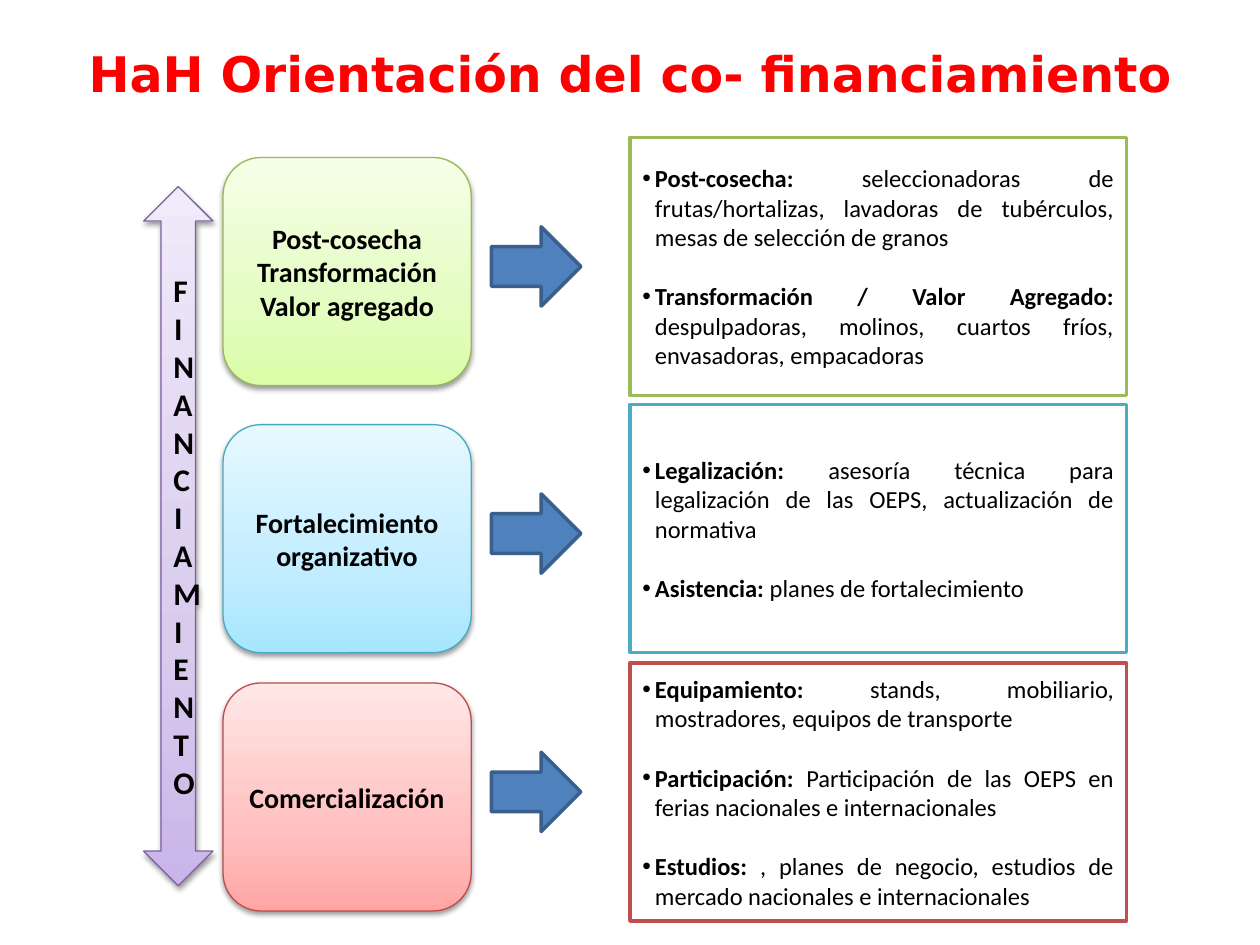
from copy import deepcopy

from lxml.etree import SubElement
from pptx import Presentation
from pptx.dml.color import RGBColor
from pptx.enum.shapes import MSO_SHAPE
from pptx.enum.text import MSO_ANCHOR, MSO_AUTO_SIZE, PP_ALIGN
from pptx.oxml.ns import qn
from pptx.util import Inches, Pt

# Content
TITLE = "HaH Orientación del co- financiamiento"
SPINE = "FINANCIAMIENTO"
SPINE_STOPS = ["C9B5E8", "D8CBEE", "F0EAF9"]
ROWS = [
    {
        "topic": ["Post-cosecha", "Transformación", "Valor agregado"],
        "stops": ["DAFDA7", "E4FCC2", "F5FFE7"],
        "edge": "98B955", "frame": "9BBB59",
        "topic_top": 1.25, "box": (1.09, 2.05),
        "items": [
            ("Post-cosecha: ", "seleccionadoras de frutas/hortalizas, lavadoras "
                               "de tubérculos, mesas de selección de granos"),
            ("Transformación / Valor Agregado: ",
             "despulpadoras, molinos, cuartos fríos, envasadoras, empacadoras"),
        ],
    },
    {
        "topic": ["Fortalecimiento organizativo"],
        "stops": ["A7E6FF", "C1EDFF", "E7F8FF"],
        "edge": "46AAC5", "frame": "4BACC6",
        "topic_top": 3.37, "box": (3.21, 1.97),
        "items": [
            ("Legalización: ", "asesoría técnica para legalización de las OEPS, "
                               "actualización de normativa"),
            ("Asistencia:", " planes de fortalecimiento"),
        ],
    },
    {
        "topic": ["Comercialización"],
        "stops": ["FFA6A5", "FFC0BF", "FFE7E7"],
        "edge": "BF4C48", "frame": "C0504D",
        "topic_top": 5.42, "box": (5.26, 2.05),
        "items": [
            ("Equipamiento: ", "stands, mobiliario, mostradores, equipos de transporte"),
            ("Participación: ", "Participación de las OEPS en ferias nacionales "
                                "e internacionales"),
            ("Estudios: ", ", planes de negocio, estudios de mercado nacionales "
                           "e internacionales"),
        ],
    },
]
STOP_POSITIONS = [0, 0.35, 1]
ARROW_DROP = 0.55  # from the top of a topic to the top of its arrow


def rgb(color):
    return RGBColor.from_string(color)


def style_run(r, size, color="000000", bold=True, font="Calibri"):
    r.font.name, r.font.size, r.font.bold = font, Pt(size), bold
    r.font.color.rgb = rgb(color)


def add_shape(s, kind, box, line, width, fill=None):
    sp = s.shapes.add_shape(kind, *map(Inches, box))
    sp.shadow.inherit = False
    sp.line.color.rgb, sp.line.width = rgb(line), Pt(width)
    if fill:
        sp.fill.solid()
        sp.fill.fore_color.rgb = rgb(fill)
    sp.text_frame.word_wrap = True
    sp.text_frame.vertical_anchor = MSO_ANCHOR.MIDDLE
    return sp


def add_glossy(s, kind, box, line, stops, lines, size):
    """Shape with an upward gradient, a soft shadow and centred bold text."""
    sp = add_shape(s, kind, box, line, 0.75)
    sp.fill.gradient()
    sp.fill.gradient_angle = 90
    gs_list = sp._element.spPr.find(qn("a:gradFill")).find(qn("a:gsLst"))
    gs_list.append(deepcopy(gs_list[-1]))
    for stop, color, position in zip(sp.fill.gradient_stops, stops, STOP_POSITIONS):
        stop.color.rgb, stop.position = rgb(color), position

    effects = sp._element.spPr.find(qn("a:effectLst"))
    shadow = SubElement(effects, qn("a:outerShdw"), blurRad=str(Pt(3.1)),
                        dist=str(Pt(1.6)), dir="5400000", rotWithShape="0")
    black = SubElement(shadow, qn("a:srgbClr"), val="000000")
    SubElement(black, qn("a:alpha"), val="38000")

    tf = sp.text_frame
    tf.text = "\n".join(lines)
    for p in tf.paragraphs:
        p.alignment = PP_ALIGN.CENTER
        style_run(p.runs[0], size)


def add_items(sp, items):
    """Justified bullets, each opening with a bold label."""
    tf = sp.text_frame
    for i, parts in enumerate(items):
        p = tf.add_paragraph() if i else tf.paragraphs[0]
        p.alignment = PP_ALIGN.JUSTIFY
        p.space_before = Pt(17 if i else 0)
        pPr = p._p.get_or_add_pPr()
        pPr.set("marL", str(Inches(0.1)))
        pPr.set("indent", str(Inches(-0.1)))
        SubElement(pPr, qn("a:buFont"), typeface="Arial")
        SubElement(pPr, qn("a:buChar"), char="•")
        for text, bold in zip(parts, (True, False)):
            r = p.add_run()
            r.text = text
            style_run(r, 14, bold=bold)


def main():
    prs = Presentation()
    prs.slide_width, prs.slide_height = Inches(10), Inches(7.5)
    s = prs.slides.add_slide(prs.slide_layouts[5])

    # Title
    title = s.shapes.title
    title.left, title.top, title.width, title.height = map(
        Inches, (0.59, 0.29, 8.82, 0.57))
    tf = title.text_frame
    tf.text = TITLE
    tf.auto_size = MSO_AUTO_SIZE.NONE
    tf.paragraphs[0].alignment = PP_ALIGN.CENTER
    style_run(tf.paragraphs[0].runs[0], 28, "FF0000", font="DejaVu Sans")

    # Rows: topic, arrow, details
    for row in ROWS:
        top = row["topic_top"]
        add_glossy(s, MSO_SHAPE.ROUNDED_RECTANGLE, (1.77, top, 1.97, 1.81),
                   row["edge"], row["stops"], row["topic"], 16)
        add_shape(s, MSO_SHAPE.RIGHT_ARROW, (3.9, top + ARROW_DROP, 0.71, 0.63),
                  "3A5F8C", 2, "4F81BD")
        box_top, box_height = row["box"]
        box = add_shape(s, MSO_SHAPE.RECTANGLE, (5, box_top, 3.94, box_height),
                        row["frame"], 2, "FFFFFF")
        add_items(box, row["items"])

    # Vertical financing arrow, narrow enough to stack the letters
    add_glossy(s, MSO_SHAPE.UP_DOWN_ARROW, (1.14, 1.48, 0.55, 5.55),
               "7D60A0", SPINE_STOPS, [SPINE], 18)

    prs.save("out.pptx")


if __name__ == "__main__":
    main()
